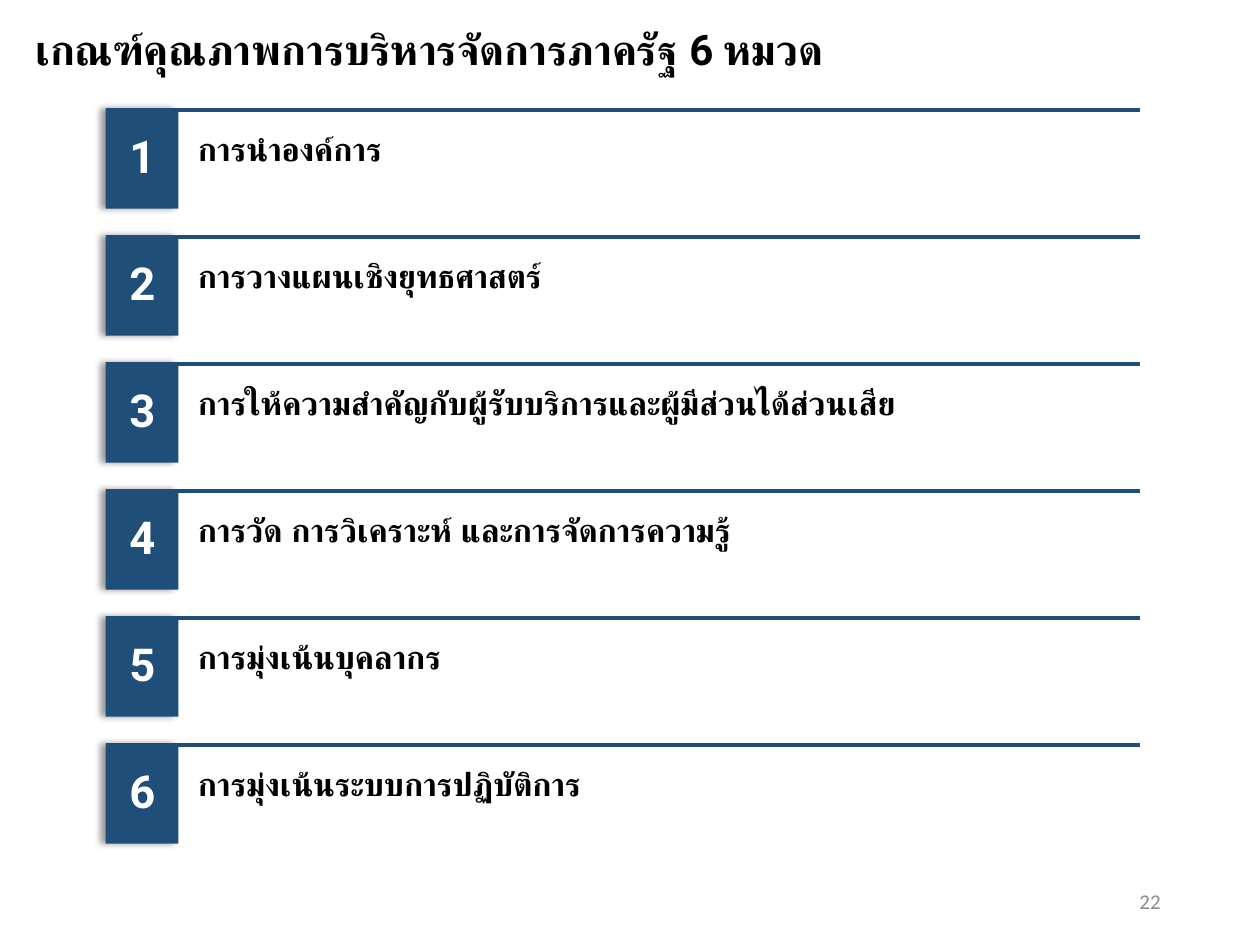
import dataclasses

import pptx
import pptx.dml.color
import pptx.enum.shapes
import pptx.enum.text
import pptx.oxml
import pptx.oxml.ns
import pptx.util

Cm = pptx.util.Cm
Pt = pptx.util.Pt
Align = pptx.enum.text.PP_ALIGN
Anchor = pptx.enum.text.MSO_ANCHOR


def rgb(code):
    return pptx.dml.color.RGBColor.from_string(code)


@dataclasses.dataclass(frozen=True)
class Theme:
    navy: str = "1F4E79"
    ink: str = "000000"
    white: str = "FFFFFF"
    gray: str = "8C8C8C"
    font: str = "Roboto"
    plain: str = "Calibri"
    title: float = 24
    digit: float = 25.9
    label: float = 18.5
    page: float = 12
    rule: float = 2.25


THEME = Theme()
TITLE = "เกณฑ์คุณภาพการบริหารจัดการภาครัฐ 6 หมวด"
TOPICS = [
    "การนำองค์การ",
    "การวางแผนเชิงยุทธศาสตร์",
    "การให้ความสำคัญกับผู้รับบริการและผู้มีส่วนได้ส่วนเสีย",
    "การวัด การวิเคราะห์ และการจัดการความรู้",
    "การมุ่งเน้นบุคลากร",
    "การมุ่งเน้นระบบการปฏิบัติการ",
]
PITCH = 2.56


def assign(item, values):
    for name, value in values.items():
        setattr(item, name, value)


def place(shape, box):
    names = ("left", "top", "width", "height")
    assign(shape, dict(zip(names, map(Cm, box))))


def write(shape, text, size, color, font=THEME.font, bold=True,
          align=Align.LEFT, anchor=Anchor.TOP, inset=(0.25, 0.13),
          space=1.0, wrap=True):
    frame = shape.text_frame
    side, edge = map(Cm, inset)
    assign(frame, {
        "text": text, "word_wrap": wrap, "vertical_anchor": anchor,
        "auto_size": pptx.enum.text.MSO_AUTO_SIZE.NONE,
        "margin_left": side, "margin_right": side,
        "margin_top": edge, "margin_bottom": edge,
    })
    para = frame.paragraphs[0]
    assign(para, {"alignment": align, "line_spacing": space})
    face = para.runs[0].font
    assign(face, {"name": font, "size": Pt(size), "bold": bold})
    face.color.rgb = rgb(color)


def add_text(slide, box, *args, **style):
    shape = slide.shapes.add_textbox(*map(Cm, box))
    write(shape, *args, **style)


def set_effect(shape, inner=""):
    xml = f'<a:effectLst {pptx.oxml.ns.nsdecls("a")}>{inner}</a:effectLst>'
    shape.element.spPr.append(pptx.oxml.parse_xml(xml))


def add_title(slide, box):
    title = slide.shapes.title
    place(title, box)
    write(title, TITLE, THEME.title, THEME.ink, anchor=Anchor.MIDDLE)


def add_row(slide, box, digit, topic):
    left, top, width, height = box

    # Rule across the top
    rule = slide.shapes.add_connector(
        pptx.enum.shapes.MSO_CONNECTOR.STRAIGHT,
        Cm(left), Cm(top), Cm(left + width), Cm(top))
    rule.line.color.rgb = rgb(THEME.navy)
    rule.line.width = Pt(THEME.rule)
    set_effect(rule)

    # Number tile with a soft shadow to its left
    tile = slide.shapes.add_shape(
        pptx.enum.shapes.MSO_SHAPE.RECTANGLE,
        Cm(left), Cm(top - 0.04), Cm(1.47), Cm(height))
    tile.fill.solid()
    tile.fill.fore_color.rgb = rgb(THEME.navy)
    tile.line.fill.background()
    set_effect(tile, (
        f'<a:outerShdw blurRad="{Pt(4)}" dist="{Pt(3)}" dir="10800000" '
        f'algn="r" rotWithShape="0"><a:srgbClr val="{THEME.ink}">'
        '<a:alpha val="40000"/></a:srgbClr></a:outerShdw>'))

    # Number and topic
    add_text(slide, (left + 0.23, top + 0.23, 1.02, 1.37), digit,
             THEME.digit, THEME.white, align=Align.CENTER, wrap=False)
    add_text(slide, (left + 1.66, top + 0.03, 20.04, 1), topic,
             THEME.label, THEME.ink, inset=(0.2, 0.2), space=1.2)


def add_list(slide, box):
    left, top, width, height = box
    for index, topic in enumerate(TOPICS):
        row = (left, top + index * PITCH, width, height)
        add_row(slide, row, str(index + 1), topic)


def add_page(slide, box):
    add_text(slide, box, "22", THEME.page, THEME.gray, font=THEME.plain,
             bold=False, align=Align.RIGHT, anchor=Anchor.MIDDLE)


def main():
    deck = pptx.Presentation()
    assign(deck, {"slide_width": Cm(25.4), "slide_height": Cm(19.05)})
    slide = deck.slides.add_slide(deck.slide_layouts.get_by_name("Title Only"))
    add_title(slide, (0.46, 0.41, 18.8, 1.14))
    add_list(slide, (2.13, 2.22, 20.85, 2.03))
    add_page(slide, (17.93, 17.65, 5.72, 1.02))
    deck.save("out.pptx")


if __name__ == "__main__":
    main()
